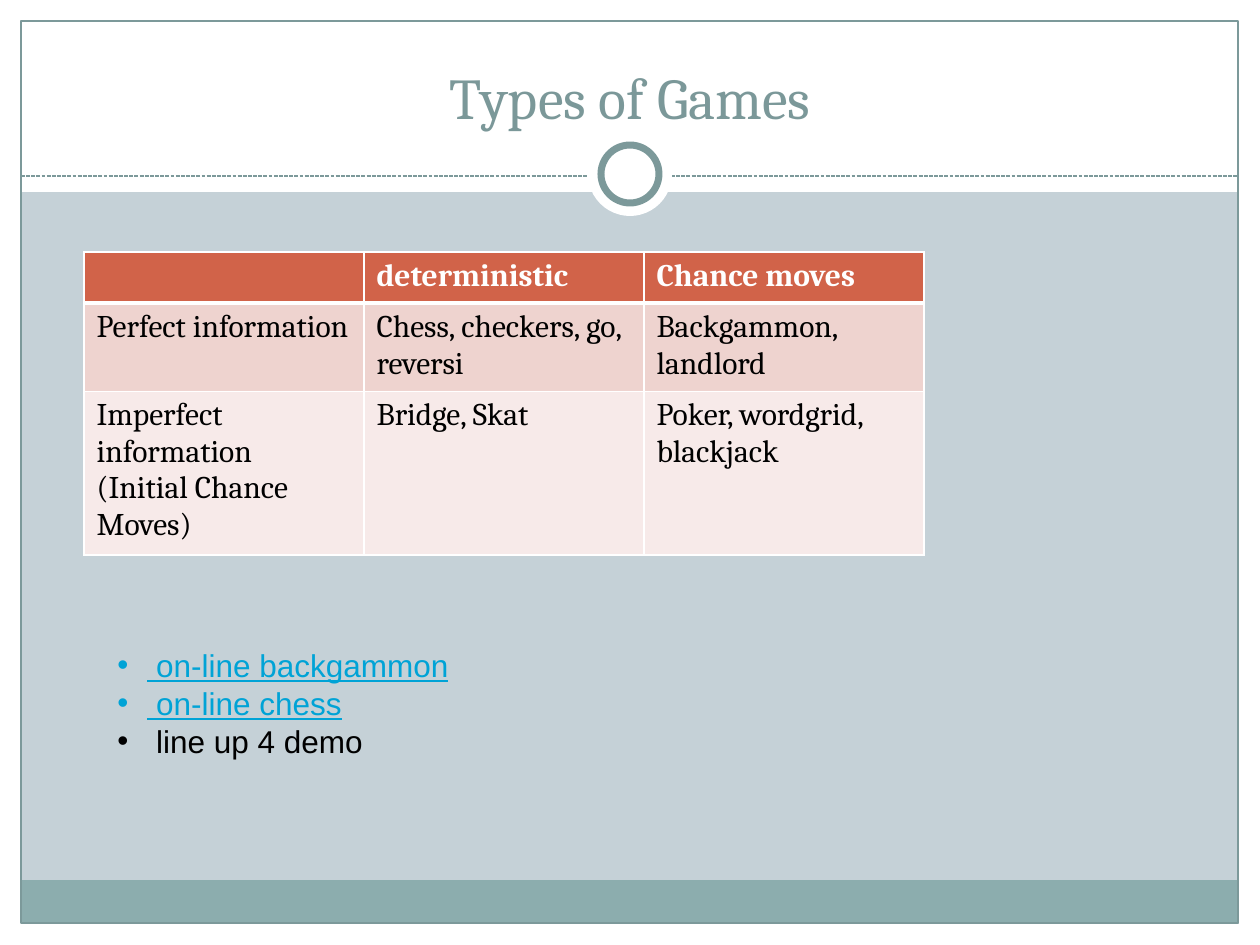
from pptx import Presentation
from pptx.dml.color import RGBColor
from pptx.enum.dml import MSO_LINE as Dash
from pptx.enum.shapes import MSO_CONNECTOR as Conn, MSO_SHAPE as Kind
from pptx.enum.text import MSO_ANCHOR as Anchor, PP_ALIGN as Align
from pptx.oxml.ns import qn
from pptx.util import Pt
from lxml.etree import SubElement

SCALE = 914400 / 126
WIDE, HIGH = 1260, 945

WHITE = RGBColor(0xFF, 0xFF, 0xFF)
BLACK = RGBColor(0x00, 0x00, 0x00)
BACK = RGBColor(0xC5, 0xD1, 0xD7)
TEAL = RGBColor(0x8C, 0xAD, 0xAE)
EDGE = RGBColor(0x7C, 0x99, 0x9A)
TITLE = RGBColor(0x7B, 0x98, 0x99)
LINK = RGBColor(0x00, 0xA3, 0xD6)
HEAD = RGBColor(0xD1, 0x63, 0x49)
BANDS = [HEAD, RGBColor(0xEE, 0xD3, 0xCF), RGBColor(0xF7, 0xEA, 0xE9)]


def emu(*px):
    return [round(n * SCALE) for n in px]


class Deck:
    serif, sans, size = "Cambria", "Arial", 18

    def __init__(self):
        self.prs = Presentation()
        self.prs.slide_width, self.prs.slide_height = emu(WIDE, HIGH)
        self.slide = self.prs.slides.add_slide(self.prs.slide_layouts[6])
        fill = self.slide.background.fill
        fill.solid()
        fill.fore_color.rgb = BACK

    def shape(self, kind, box, fill=None, line=None, width=0.75):
        item = self.slide.shapes.add_shape(kind, *emu(*box))
        item.shadow.inherit = False
        if fill is None:
            item.fill.background()
        else:
            item.fill.solid()
            item.fill.fore_color.rgb = fill
        if line is None:
            item.line.fill.background()
        else:
            item.line.color.rgb = line
            item.line.width = Pt(width)

    def dashed(self, x1, y1, x2, y2):
        item = self.slide.shapes.add_connector(
            Conn.STRAIGHT, *emu(x1, y1, x2, y2))
        item.line.color.rgb = EDGE
        item.line.width = Pt(0.75)
        item.line.dash_style = Dash.SQUARE_DOT
        SubElement(item._element.spPr, qn("a:effectLst"))

    def run(self, para, text, color, font=serif, size=size, **style):
        run = para.add_run()
        run.text = text
        run.font.name, run.font.size = font, Pt(size)
        run.font.color.rgb = color
        for key, value in style.items():
            setattr(run.font, key, value)

    def frame(self, box):
        frame = self.slide.shapes.add_textbox(*emu(*box)).text_frame
        frame.word_wrap = True
        return frame

    def title(self, box, text):
        frame = self.frame(box)
        frame.vertical_anchor = Anchor.BOTTOM
        para = frame.paragraphs[0]
        para.alignment = Align.CENTER
        self.run(para, text, TITLE, size=33)

    def bullets(self, box, items, indent=30):
        frame = self.frame(box)
        for i, (text, color, under) in enumerate(items):
            para = frame.add_paragraph() if i else frame.paragraphs[0]
            props = para._p.get_or_add_pPr()
            step = emu(indent)[0]
            props.set("marL", str(step))
            props.set("indent", str(-step))
            SubElement(props, qn("a:buFont"), typeface=self.sans)
            SubElement(props, qn("a:buChar"), char="•")
            self.run(para, text, color, self.sans, underline=under)

    def border(self, cell, **widths):
        props = cell._tc.get_or_add_tcPr()
        for side in "LRTB":
            line = SubElement(props, qn(f"a:ln{side}"),
                              w=str(Pt(widths.get(side, 1))))
            fill = SubElement(line, qn("a:solidFill"))
            SubElement(fill, qn("a:srgbClr"), val=str(WHITE))

    def table(self, left, top, cols, rows, data):
        table = self.slide.shapes.add_table(
            len(rows), len(cols),
            *emu(left, top, sum(cols), sum(rows))).table
        for col, width in zip(table.columns, emu(*cols)):
            col.width = width
        for row, height in zip(table.rows, emu(*rows)):
            row.height = height
        rules = [{"B": 3}, {"T": 3}, {}]
        for r, texts in enumerate(data):
            for c, text in enumerate(texts):
                cell = table.cell(r, c)
                self.border(cell, **rules[r])
                cell.fill.solid()
                cell.fill.fore_color.rgb = BANDS[r]
                para = cell.text_frame.paragraphs[0]
                for i, part in enumerate(text.split("\n") if text else []):
                    if i:
                        para.add_line_break()
                    self.run(para, part, BLACK if r else WHITE, bold=r == 0)


def main():
    deck = Deck()

    # White margins and header
    for box in [(0, 924, WIDE, 21), (0, 0, WIDE, 192),
                (0, 0, 21, HIGH), (1239, 0, 21, HIGH)]:
        deck.shape(Kind.RECTANGLE, box, WHITE)

    # Footer band, frame and divider
    deck.shape(Kind.RECTANGLE, (21, 880, 1217, 43), TEAL)
    deck.shape(Kind.RECTANGLE, (21, 21, 1217, 902), line=EDGE)
    deck.dashed(21, 176, 1239, 176)

    # Ring on the divider
    deck.shape(Kind.OVAL, (588, 132, 84, 84), WHITE)
    deck.shape(Kind.OVAL, (601, 145, 58, 58), WHITE, EDGE, 4)

    deck.title((42, 32, 1176, 105), "Types of Games")

    # Games by information and chance
    deck.table(84, 252, [280] * 3, [51, 86, 158], [
        ["", "deterministic", "Chance moves"],
        ["Perfect information", "Chess, checkers, go, reversi",
         "Backgammon, landlord"],
        ["Imperfect information\n(Initial Chance Moves)", "Bridge, Skat",
         "Poker, wordgrid, blackjack"],
    ])

    # Demos
    deck.bullets((105, 640, 955, 127), [
        (" on-line backgammon", LINK, True),
        (" on-line chess", LINK, True),
        (" line up 4 demo", BLACK, False),
    ])

    deck.prs.save("out.pptx")


if __name__ == "__main__":
    main()
